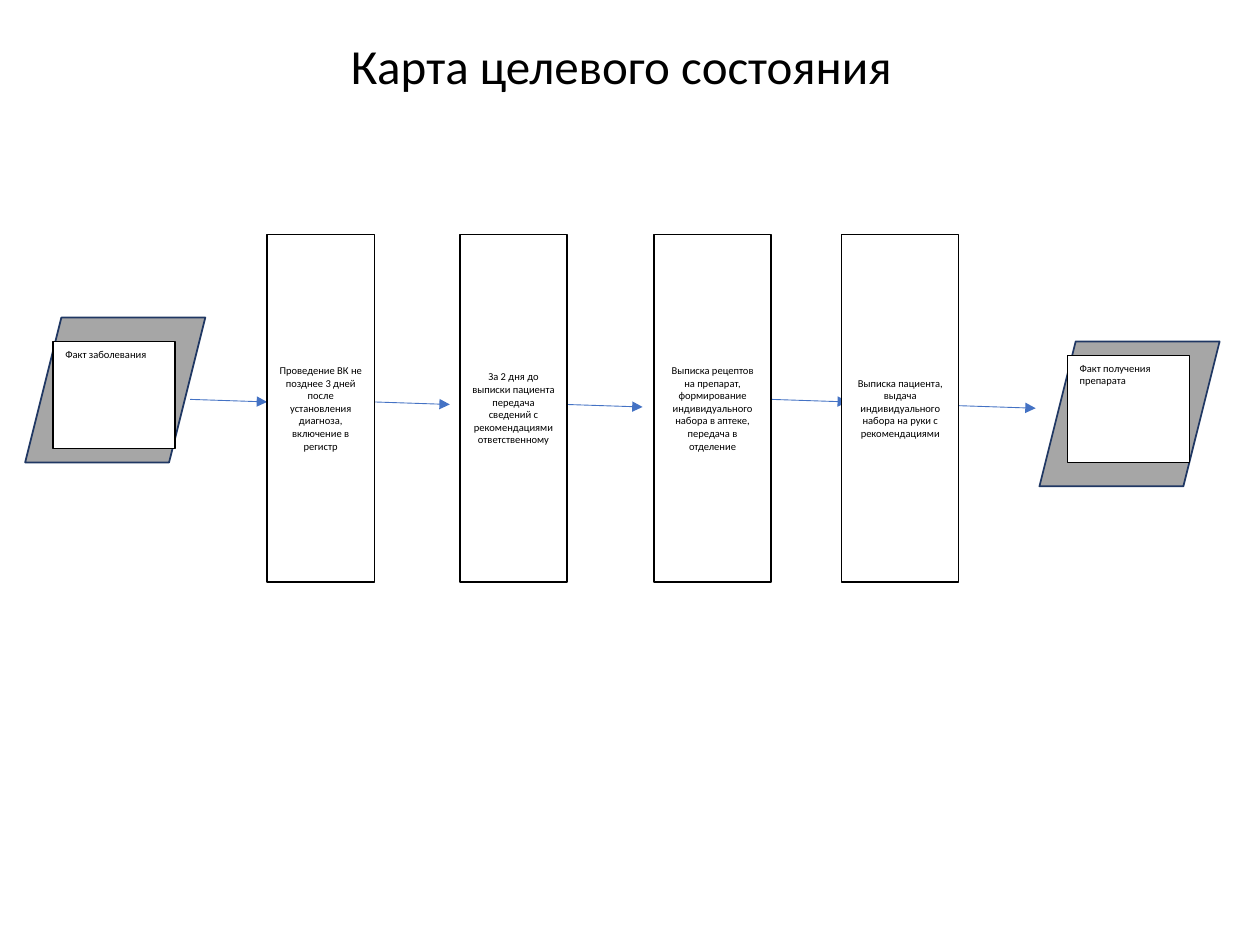
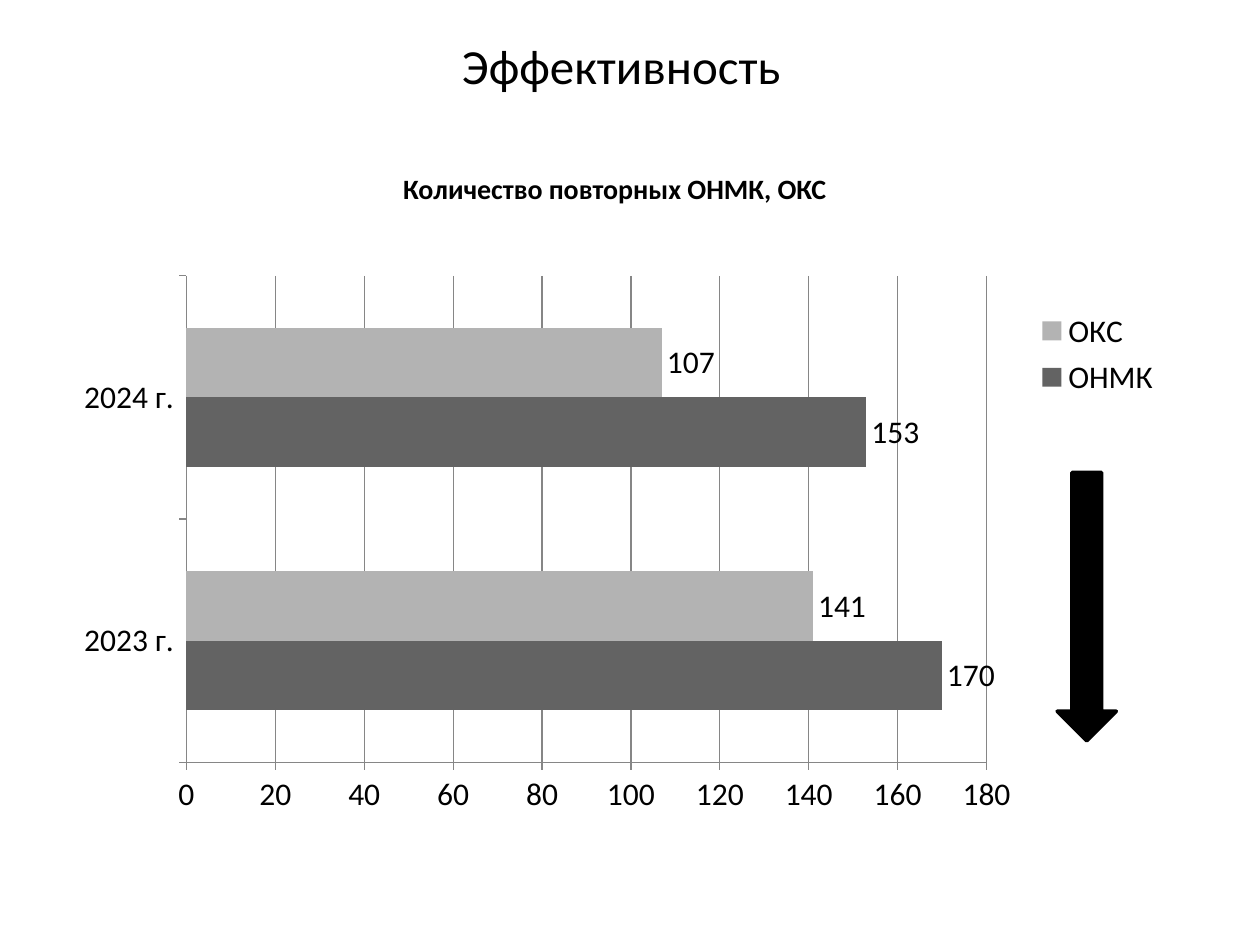
from lxml import etree
from pptx import Presentation
from pptx.chart.data import CategoryChartData
from pptx.dml.color import RGBColor
from pptx.enum.chart import XL_CHART_TYPE, XL_LABEL_POSITION, XL_LEGEND_POSITION, XL_TICK_MARK
from pptx.enum.shapes import MSO_CONNECTOR, MSO_SHAPE
from pptx.enum.text import MSO_ANCHOR, PP_ALIGN
from pptx.oxml.ns import qn
from pptx.util import Inches, Pt

RECT, PARALLELOGRAM, DOWN_ARROW = MSO_SHAPE.RECTANGLE, MSO_SHAPE.PARALLELOGRAM, MSO_SHAPE.DOWN_ARROW
STRAIGHT = MSO_CONNECTOR.STRAIGHT
LEFT, CENTER = PP_ALIGN.LEFT, PP_ALIGN.CENTER
TOP, MIDDLE = MSO_ANCHOR.TOP, MSO_ANCHOR.MIDDLE
BAR, LEGEND_RIGHT = XL_CHART_TYPE.BAR_CLUSTERED, XL_LEGEND_POSITION.RIGHT
LABEL_END, TICK_OUT = XL_LABEL_POSITION.OUTSIDE_END, XL_TICK_MARK.OUTSIDE

FONT = "Calibri"
COLORS = {
    "text": "000000", "box": "FFFFFF", "gate": "A6A6A6", "gate_line": "1F3763",
    "flow": "4472C4", "stroke": "636363", "coronary": "B3B3B3", "grid": "868686",
}
STEP_TOP, STEP_HEIGHT = 1.86, 2.76
STEPS = [
    (2.12, 0.85, "Проведение ВК не позднее 3 дней после установления диагноза, включение в регистр"),
    (3.65, 0.85, "За 2 дня до выписки пациента передача сведений с рекомендациями ответственному"),
    (5.19, 0.93, "Выписка рецептов на препарат, формирование индивидуального набора в аптеке, "
                 "передача в отделение"),
    (6.68, 0.93, "Выписка пациента, выдача индивидуального набора на руки с рекомендациями"),
]
FLOW_STARTS = [(1.51, 3.17), (2.96, 3.19), (4.49, 3.21), (6.12, 3.17), (7.61, 3.22)]
FLOW_RUN, FLOW_DROP = 0.61, 0.02


def rgb(name):
    return RGBColor.from_string(COLORS[name])


def style_font(font, size, bold=False):
    font.name, font.size, font.bold = FONT, Pt(size), bold
    font.color.rgb = rgb("text")


def set_text(sp, text, size, align=CENTER, anchor=TOP, after=0, bold=False):
    tf = sp.text_frame
    tf.word_wrap = True
    tf.vertical_anchor = anchor
    tf.text = text
    p = tf.paragraphs[0]
    p.alignment = align
    p.space_after = Pt(after)
    style_font(p.runs[0].font, size, bold)


def add_label(s, box, text, size, **options):
    set_text(s.shapes.add_textbox(*map(Inches, box)), text, size, **options)


def add_figure(s, kind, box, fill, line, width):
    sp = s.shapes.add_shape(kind, *map(Inches, box))
    sp.shadow.inherit = False
    sp.fill.solid()
    sp.fill.fore_color.rgb = rgb(fill)
    sp.line.color.rgb = rgb(line)
    sp.line.width = Pt(width)
    return sp


def add_titled_slide(prs, title):
    s = prs.slides.add_slide(prs.slide_layouts[6])
    add_label(s, (0.43, 0.21, 9, 0.61), title, 28, anchor=MIDDLE)
    return s


def add_text_box(s, box, text, align, anchor):
    sp = add_figure(s, RECT, box, "box", "text", 0.75)
    set_text(sp, text, 6, align, anchor, after=10)


def add_gate(s, x, y, inset_y, text):
    add_figure(s, PARALLELOGRAM, (x, y, 1.43, 1.15), "gate", "gate_line", 1)
    add_text_box(s, (x + 0.22, y + inset_y, 0.97, 0.85), text, LEFT, TOP)


def add_flow_arrow(s, x, y):
    ends = (x, y, x + FLOW_RUN, y + FLOW_DROP)
    arrow = s.shapes.add_connector(STRAIGHT, *map(Inches, ends))
    arrow.line.color.rgb = rgb("flow")
    arrow.line.width = Pt(0.5)
    etree.SubElement(arrow.line._get_or_add_ln(), qn("a:tailEnd"), type="triangle")
    etree.SubElement(arrow._element.spPr, qn("a:effectLst"))


def build_process_map(prs):
    s = add_titled_slide(prs, "Карта целевого состояния")
    add_gate(s, 0.2, 2.52, 0.19, "Факт заболевания")
    for x, y in FLOW_STARTS:
        add_flow_arrow(s, x, y)
    for x, width, text in STEPS:
        add_text_box(s, (x, STEP_TOP, width, STEP_HEIGHT), text, CENTER, MIDDLE)
    add_gate(s, 8.25, 2.71, 0.11, "Факт получения препарата")


def manual_layout(parent, index, x, y, w, h, inner=False):
    for old in parent.findall(qn("c:layout")):
        parent.remove(old)
    layout = etree.Element(qn("c:layout"))
    manual = etree.SubElement(layout, qn("c:manualLayout"))
    settings = [("xMode", "edge"), ("yMode", "edge"), ("x", x), ("y", y), ("w", w), ("h", h)]
    if inner:
        settings.insert(0, ("layoutTarget", "inner"))
    for tag, value in settings:
        etree.SubElement(manual, qn("c:" + tag), val=str(value))
    parent.insert(index, layout)


def add_repeat_chart(s, box):
    data = CategoryChartData()
    data.categories = ["2023 г.", "2024 г."]
    data.add_series("ОНМК", (170, 153))
    data.add_series("ОКС", (141, 107))
    chart = s.shapes.add_chart(BAR, *map(Inches, box), data).chart
    chart.has_title = False
    style_font(chart.font, 18)

    plot = chart.plots[0]
    plot.vary_by_categories = False
    plot.gap_width, plot.overlap = 150, 0
    plot.has_data_labels = True
    plot.data_labels.show_value = True
    plot.data_labels.position = LABEL_END
    for series, color in zip(plot.series, ("stroke", "coronary")):
        series.format.fill.solid()
        series.format.fill.fore_color.rgb = rgb(color)

    values = chart.value_axis
    values.minimum_scale, values.maximum_scale, values.major_unit = 0, 180, 20
    values.has_major_gridlines = True
    for axis in (values, chart.category_axis):
        axis.major_tick_mark = TICK_OUT
    for part in (values, chart.category_axis, values.major_gridlines):
        part.format.line.color.rgb = rgb("grid")
        part.format.line.width = Pt(0.75)

    chart.has_legend = True
    chart.legend.position = LEGEND_RIGHT
    chart.legend.include_in_layout = False
    manual_layout(chart.legend._element, 1, 0.86, 0.07, 0.14, 0.18)
    manual_layout(chart._chartSpace.chart.plotArea, 0, 0.11, 0.02, 0.72, 0.87, inner=True)


def build_effect(prs):
    s = add_titled_slide(prs, "Эффективность")
    add_label(s, (1.61, 1.31, 6.54, 0.37), "Количество повторных ОНМК, ОКС", 16, bold=True)
    add_repeat_chart(s, (0.51, 2.1, 8.82, 4.44))
    add_figure(s, DOWN_ARROW, (8.39, 3.75, 0.47, 2.13), "text", "text", 2)


def main():
    prs = Presentation()
    prs.slide_width, prs.slide_height = Inches(10), Inches(7.5)
    build_process_map(prs)
    build_effect(prs)
    prs.save("out.pptx")


if __name__ == "__main__":
    main()
